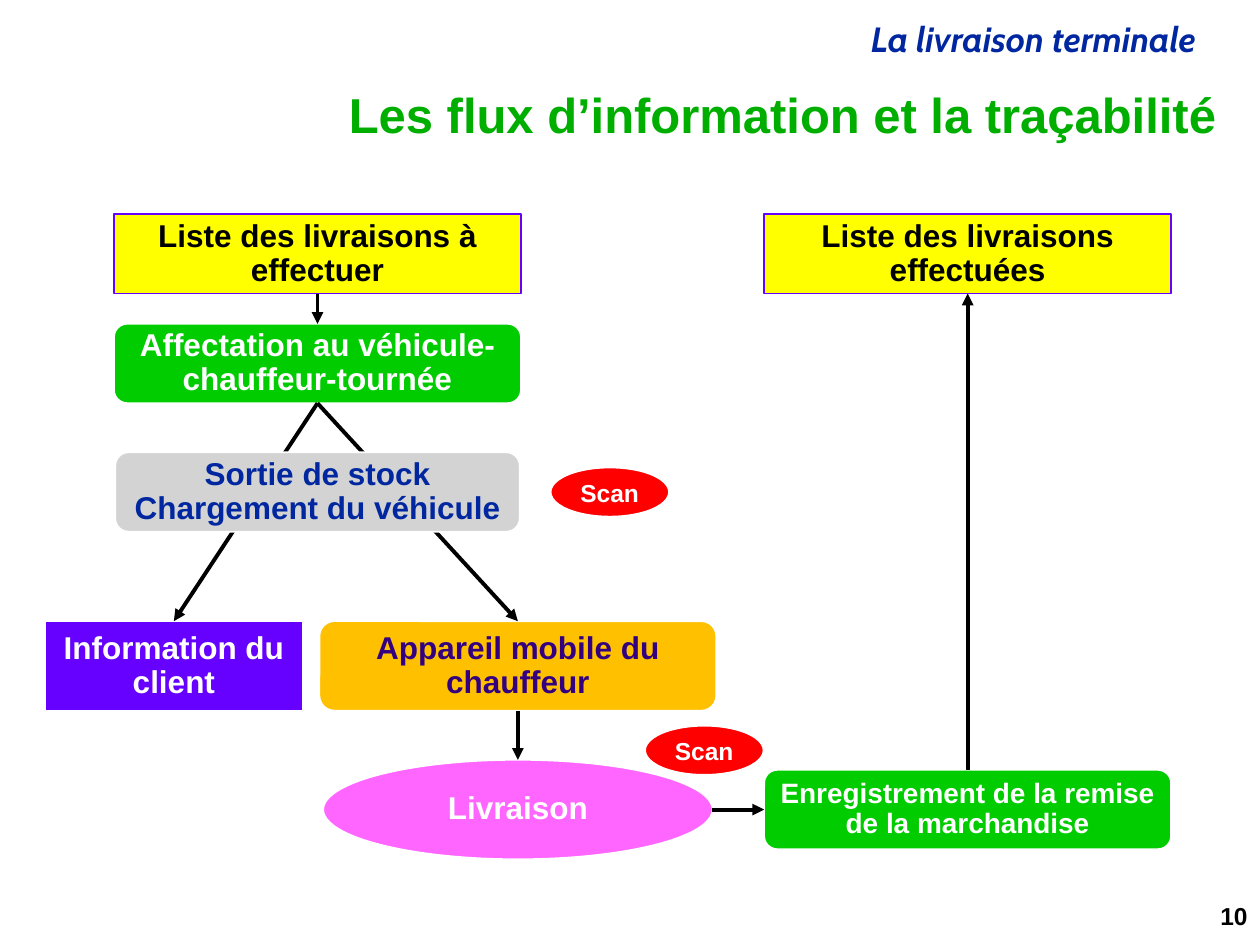
from lxml.etree import SubElement
from pptx import Presentation
from pptx.dml.color import RGBColor
from pptx.enum.shapes import MSO_CONNECTOR, MSO_SHAPE
from pptx.enum.text import MSO_ANCHOR, PP_ALIGN
from pptx.oxml.ns import qn
from pptx.util import Inches, Pt

WIDTH, HEIGHT = Inches(10), Inches(7.5)
COLUMNS = {"client": 13.8, "planned": 25.2, "mobile": 41.1, "done": 76.8}
ROWS = {"lists": 26.87, "assignment": 38.47, "loading": 52.07,
        "devices": 70.47, "delivery": 85.67}
STEP_SIZE = (32.3, 8.4)
SCAN_SIZE = (9.4, 5.2)


def across(percent):
    """Turn a percentage of the slide's width into a length."""
    return round(WIDTH * percent / 100)


def down(percent):
    """Turn a percentage of the slide's height into a length."""
    return round(HEIGHT * percent / 100)


def color(hex_string):
    """Turn a hex string into a colour."""
    return RGBColor.from_string(hex_string)


def write(shape, text, size, hex_color, align=PP_ALIGN.CENTER,
          anchor=MSO_ANCHOR.MIDDLE, font="Arial", italic=False, wrap=True):
    """Fill a shape with one bold paragraph, breaking it at each newline."""
    frame = shape.text_frame
    frame.word_wrap = wrap
    frame.vertical_anchor = anchor
    paragraph = frame.paragraphs[0]
    paragraph.alignment = align
    paragraph.line_spacing = 0.9
    for number, line in enumerate(text.split("\n")):
        if number:
            paragraph.add_line_break()
        run = paragraph.add_run()
        run.text = line
        run.font.name = font
        run.font.size = Pt(size)
        run.font.bold = True
        run.font.italic = italic
        run.font.color.rgb = color(hex_color)


def add_label(slide, box, text, size, hex_color, **style):
    """Add right-aligned text in a box given as shares of the slide."""
    left, top, width, height = box
    shape = slide.shapes.add_textbox(across(left), down(top), across(width), down(height))
    write(shape, text, size, hex_color, align=PP_ALIGN.RIGHT, **style)


def add_block(slide, kind, center, dimensions, text, fill, text_color="FFFFFF",
              size=18, outline="FFFFFF", **style):
    """Add a filled shape around a centre point and return it."""
    (x, y), (width, height) = center, dimensions
    shape = slide.shapes.add_shape(kind, across(x - width / 2), down(y - height / 2),
                                   across(width), down(height))
    shape.shadow.inherit = False
    shape.fill.solid()
    shape.fill.fore_color.rgb = color(fill)
    shape.line.color.rgb = color(outline)
    shape.line.width = Pt(1)
    write(shape, text, size, text_color, **style)
    return shape


def add_scan(slide, center):
    """Add a red scan marker."""
    add_block(slide, MSO_SHAPE.OVAL, center, SCAN_SIZE, "Scan", "FF0000", size=14,
              align=PP_ALIGN.LEFT, anchor=MSO_ANCHOR.TOP, wrap=False)


def side(shape, name):
    """Return the middle point of one side of a shape."""
    middle_x = shape.left + shape.width // 2
    middle_y = shape.top + shape.height // 2
    return {"top": (middle_x, shape.top),
            "bottom": (middle_x, shape.top + shape.height),
            "left": (shape.left, middle_y),
            "right": (shape.left + shape.width, middle_y)}[name]


def add_arrow(slide, source, target, leave="bottom", enter="top"):
    """Draw a black arrow from a side of one shape to a side of another."""
    connector = slide.shapes.add_connector(
        MSO_CONNECTOR.STRAIGHT, *side(source, leave), *side(target, enter))
    connector.line.color.rgb = color("000000")
    connector.line.width = Pt(2.25)
    SubElement(connector.line._get_or_add_ln(), qn("a:tailEnd"), type="triangle")
    SubElement(connector._element.spPr, qn("a:effectLst"))


def add_flow(slide):
    """Draw the delivery steps, the arrows between them and the scans."""
    def place(column, row):
        """Return the centre of a grid cell."""
        return COLUMNS[column], ROWS[row]

    box, rounded, oval = MSO_SHAPE.RECTANGLE, MSO_SHAPE.ROUNDED_RECTANGLE, MSO_SHAPE.OVAL
    planned, done = [
        add_block(slide, box, place(column, "lists"), STEP_SIZE, text,
                  "FFFF00", "000000", outline="6600FF")
        for column, text in (("planned", "Liste des livraisons à effectuer"),
                             ("done", "Liste des livraisons effectuées"))]
    assignment = add_block(slide, rounded, place("planned", "assignment"), STEP_SIZE,
                           "Affectation au véhicule-chauffeur-tournée", "00CC00")
    delivery = add_block(slide, oval, place("mobile", "delivery"), (30.9, 10.53),
                         "Livraison", "FF66FF")
    record = add_block(slide, rounded, place("done", "delivery"), STEP_SIZE,
                       "Enregistrement de la remise de la marchandise", "00CC00", size=16)
    mobile = add_block(slide, rounded, place("mobile", "devices"), (31.5, 9.47),
                       "Appareil mobile du chauffeur", "FFC000", "330080")
    client = add_block(slide, box, place("client", "devices"), (20.5, 9.47),
                       "Information du client", "6600FF")

    for source, target in ((planned, assignment), (assignment, client),
                           (assignment, mobile), (mobile, delivery)):
        add_arrow(slide, source, target)
    add_arrow(slide, record, done, "top", "bottom")
    add_arrow(slide, delivery, record, "right", "left")

    add_block(slide, rounded, place("planned", "loading"), (32.1, 8.4),
              "Sortie de stock\nChargement du véhicule", "D3D3D3", "00279F")
    add_scan(slide, (48.4, ROWS["loading"]))
    add_scan(slide, (55.9, 79.4))


def main():
    """Build the slide and save it."""
    presentation = Presentation()
    presentation.slide_width, presentation.slide_height = WIDTH, HEIGHT
    slide = presentation.slides.add_slide(presentation.slide_layouts[6])
    add_label(slide, (48.4, 1.73, 47.5, 5.33), "La livraison terminale", 20, "00279F",
              font="Cabin", italic=True, anchor=MSO_ANCHOR.TOP)
    add_label(slide, (77.5, 95.07, 22.5, 5.33), "10", 14, "000000", anchor=MSO_ANCHOR.TOP)
    add_label(slide, (11.7, 9.07, 85.8, 6.67),
              "Les flux d’information et la traçabilité", 28, "00AE00")
    add_flow(slide)
    presentation.save("out.pptx")


if __name__ == "__main__":
    main()
